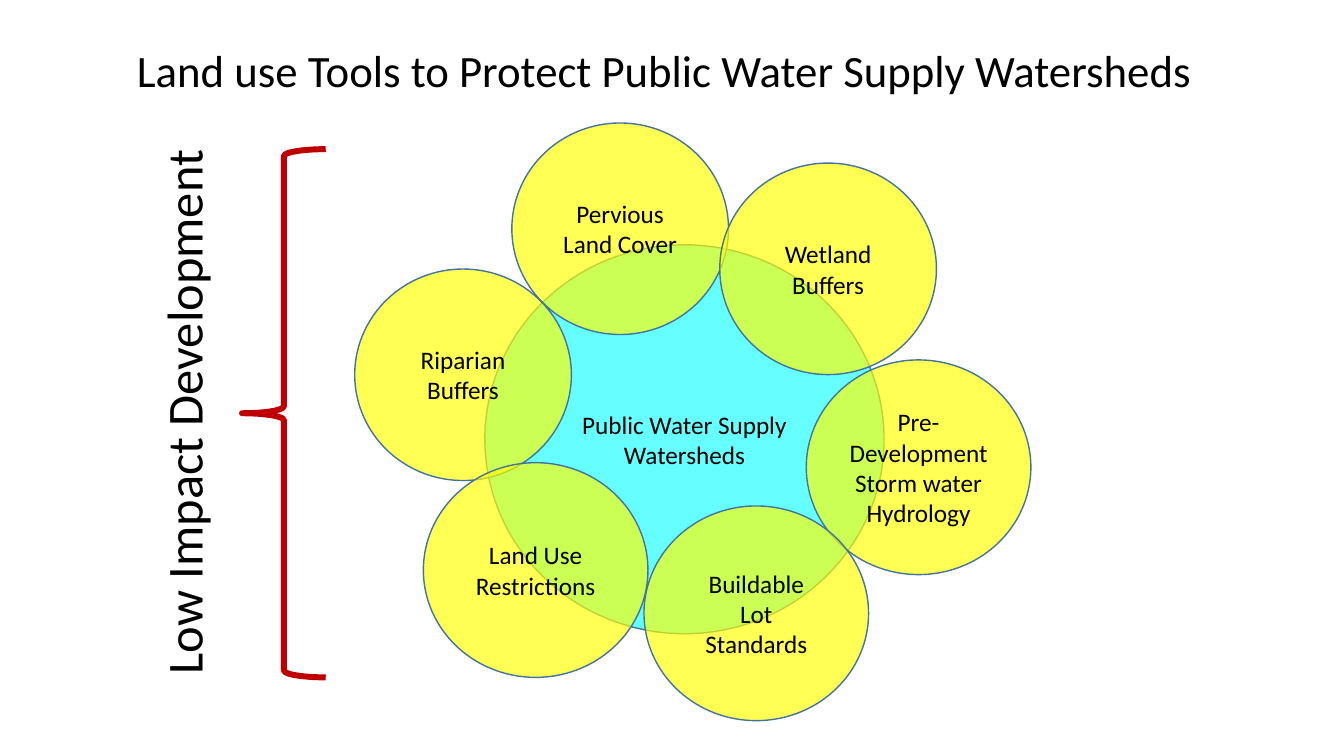
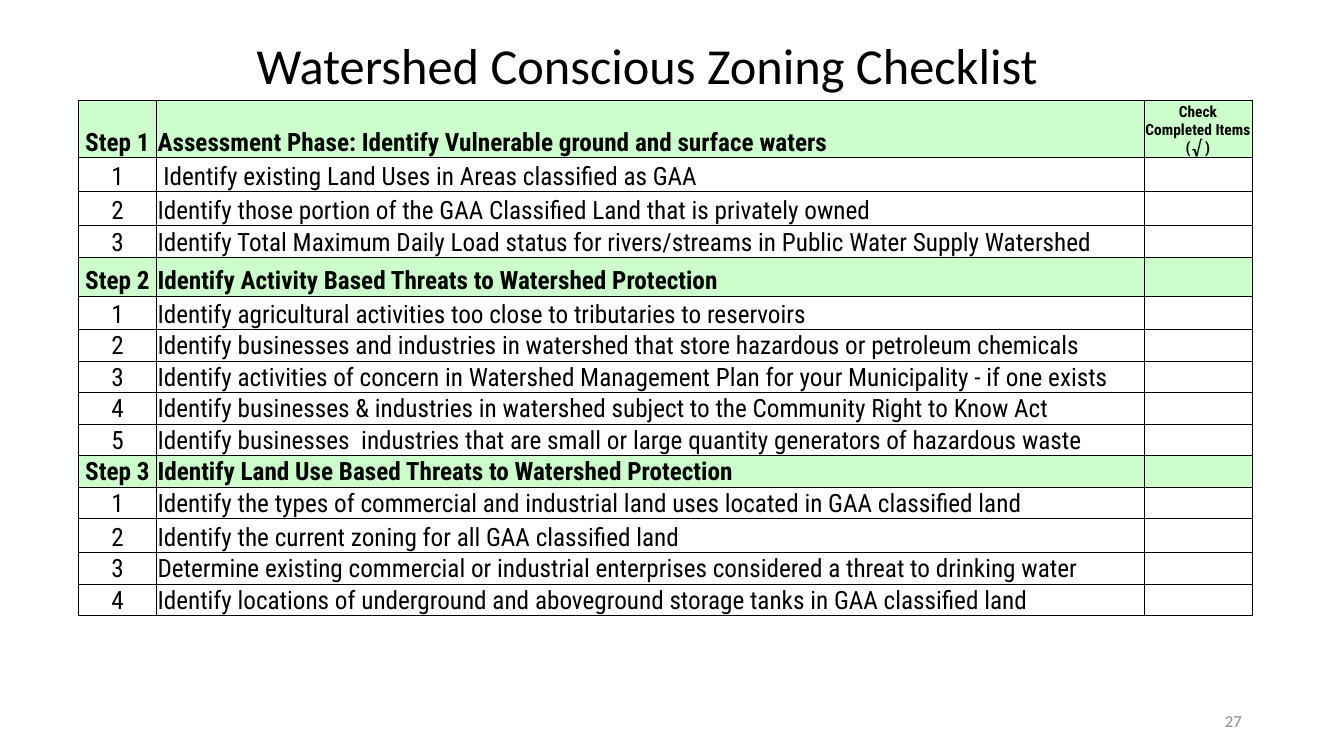
from dataclasses import dataclass

from lxml.etree import SubElement
from pptx import Presentation
from pptx.dml.color import RGBColor as Rgb
from pptx.enum.shapes import MSO_SHAPE as Shape
from pptx.enum.text import MSO_ANCHOR as Anchor, MSO_AUTO_SIZE as AutoSize, PP_ALIGN as Align
from pptx.oxml.ns import qn
from pptx.util import Cm, Pt


@dataclass(frozen=True)
class Theme:
    body_font: str = "Calibri"
    table_font: str = "Roboto Condensed"
    symbol_font: str = "TeX Gyre Pagella"
    ink: str = "000000"
    muted: str = "8C8C8C"
    water: str = "66FFFF"
    tool: str = "FFFF00"
    outline: str = "43739E"
    brace: str = "C00000"
    step: str = "CCFFCC"
    tool_opacity: int = 67
    heading: int = 36
    long_heading: int = 32
    body: int = 18
    note: int = 12
    column_note: int = 11


THEME = Theme()

SMALL, LARGE = (5.46, 5.33), (5.66, 5.41)
TOOLS = [  # text, left and top in cm, size
    ("Riparian Buffers", (8.94, 6.78), SMALL),
    ("Pre-Development Storm water Hydrology", (20.32, 9.07), LARGE),
    ("Buildable\nLot Standards", (16.23, 12.75), LARGE),
    ("Pervious Land Cover", (12.9, 3.1), SMALL),
    ("Wetland\nBuffers", (18.14, 4.11), SMALL),
    ("Land Use\nRestrictions", (10.67, 11.66), LARGE),
]

COLUMN_WIDTHS = (1.96, 24.89, 2.72)
CHECK_HEADING = (
    ("Check Completed Items (", THEME.table_font),
    ("√", THEME.symbol_font),
    (" )", THEME.table_font),
)
STEPS = [  # heading and items, each with its row height in cm
    (("Assessment Phase: Identify Vulnerable ground and surface waters", 1.39), [
        (" Identify existing Land Uses in Areas classified as GAA", 0.86),
        ("Identify those portion of the GAA Classified Land that is privately owned", 0.86),
        ("Identify Total Maximum Daily Load status for rivers/streams in Public Water Supply Watershed", 0.76),
    ]),
    (("Identify Activity Based Threats to Watershed Protection", 0.98), [
        ("Identify agricultural activities too close to tributaries to reservoirs", 0.84),
        ("Identify businesses and industries in watershed that store hazardous or petroleum chemicals", 0.76),
        ("Identify activities of concern in Watershed Management Plan for your Municipality - if one exists", 0.76),
        ("Identify businesses & industries in watershed subject to the Community Right to Know Act", 0.76),
        ("Identify businesses  industries that are small or large quantity generators of hazardous waste", 0.76),
    ]),
    (("Identify Land Use Based Threats to Watershed Protection", 0.76), [
        ("Identify the types of commercial and industrial land uses located in GAA classified land", 0.76),
        ("Identify the current zoning for all GAA classified land", 0.86),
        ("Determine existing commercial or industrial enterprises considered a threat to drinking water", 0.76),
        ("Identify locations of underground and aboveground storage tanks in GAA classified land", 0.76),
    ]),
]


def style_run(run, size, font=THEME.body_font, color=THEME.ink, bold=False):
    run.font.name = font
    run.font.size = Pt(size)
    run.font.bold = bold
    run.font.color.rgb = Rgb.from_string(color)


def write(frame, text, size, align=Align.LEFT, **style):
    frame.text = text
    for paragraph in frame.paragraphs:
        paragraph.alignment = align
        for run in paragraph.runs:
            style_run(run, size, **style)


def add_heading(slide, text, box, size=THEME.heading, rotation=0):
    heading = slide.shapes.add_textbox(*map(Cm, box))
    heading.rotation = rotation
    frame = heading.text_frame
    frame.word_wrap = False
    frame.auto_size = AutoSize.SHAPE_TO_FIT_TEXT
    write(frame, text, size)


def add_page_number(slide, number):
    frame = slide.shapes.add_textbox(Cm(23.93), Cm(17.65), Cm(7.62), Cm(1.02)).text_frame
    frame.word_wrap = True
    frame.vertical_anchor = Anchor.MIDDLE
    write(frame, str(number), THEME.note, Align.RIGHT, color=THEME.muted)


def add_circle(slide, text, position, size, fill, opacity=100):
    circle = slide.shapes.add_shape(Shape.OVAL, *map(Cm, position + size))
    circle.shadow.inherit = False
    circle.fill.solid()
    circle.fill.fore_color.rgb = Rgb.from_string(fill)
    if opacity < 100:
        color = circle._element.spPr.find(qn("a:solidFill"))[0]
        SubElement(color, qn("a:alpha"), val=str(opacity * 1000))
    circle.line.color.rgb = Rgb.from_string(THEME.outline)
    circle.line.width = Pt(1)
    circle.text_frame.word_wrap = True
    circle.text_frame.vertical_anchor = Anchor.MIDDLE
    write(circle.text_frame, text, THEME.body, Align.CENTER)


def add_brace(slide, box):
    brace = slide.shapes.add_shape(Shape.LEFT_BRACE, *map(Cm, box))
    brace.shadow.inherit = False
    brace.fill.background()
    brace.line.color.rgb = Rgb.from_string(THEME.brace)
    brace.line.width = Pt(4.25)


def format_cell(cell, fill):
    """Set insets, thin borders and the fill; borders precede the fill in the XML."""
    cell.margin_left = cell.margin_right = cell.margin_top = Cm(0.03)
    cell.margin_bottom = 0
    cell.vertical_anchor = Anchor.BOTTOM
    properties = cell._tc.get_or_add_tcPr()
    for side in ("lnL", "lnR", "lnT", "lnB"):
        border = SubElement(properties, qn(f"a:{side}"), w=str(Pt(0.5)))
        solid = SubElement(border, qn("a:solidFill"))
        SubElement(solid, qn("a:srgbClr"), val=THEME.ink)
    if fill:
        cell.fill.solid()
        cell.fill.fore_color.rgb = Rgb.from_string(fill)
    else:
        cell.fill.background()


def write_check_heading(cell):
    paragraph = cell.text_frame.paragraphs[0]
    paragraph.alignment = Align.CENTER
    for text, font in CHECK_HEADING:
        run = paragraph.add_run()
        run.text = text
        style_run(run, THEME.column_note, font, bold=True)


def checklist_rows():
    """Yield label, text, height and whether the row is a step heading."""
    for step, (heading, items) in enumerate(STEPS, 1):
        yield f"Step {step}", *heading, True
        for number, item in enumerate(items, 1):
            yield str(number), *item, False


def add_checklist(slide, left, top):
    rows = list(checklist_rows())
    height = sum(row[2] for row in rows)
    table = slide.shapes.add_table(
        len(rows), len(COLUMN_WIDTHS), Cm(left), Cm(top), Cm(sum(COLUMN_WIDTHS)), Cm(height)
    ).table
    table.first_row = table.horz_banding = False
    for column, width in zip(table.columns, COLUMN_WIDTHS):
        column.width = Cm(width)
    for row, (label, text, row_height, is_step) in zip(table.rows, rows):
        row.height = Cm(row_height)
        for cell in row.cells:
            format_cell(cell, THEME.step if is_step else None)
        label_cell, text_cell, _ = row.cells
        style = dict(font=THEME.table_font, bold=is_step)
        write(label_cell.text_frame, label, THEME.body, Align.CENTER, **style)
        write(text_cell.text_frame, text, THEME.body, **style)
    write_check_heading(table.cell(0, 2))


def build_tools_slide(slide):
    add_circle(slide, "Public Water Supply\nWatersheds", (12.22, 6.17), (10.06, 9.8), THEME.water)
    for text, position, size in TOOLS:
        add_circle(slide, text, position, size, THEME.tool, THEME.tool_opacity)
    add_heading(slide, "Land use Tools to Protect Public Water Supply Watersheds",
                (3.2, 0.94, 27.36, 1.63), THEME.long_heading)
    add_heading(slide, "Low Impact Development", (-2.31, 9.42, 13.84, 1.8), rotation=270)
    add_brace(slide, (6.1, 3.76, 2.11, 13.31))


def build_checklist_slide(slide):
    add_page_number(slide, 27)
    add_checklist(slide, 1.98, 2.54)
    add_heading(slide, "Watershed Conscious Zoning Checklist", (6.22, 0.74, 21.08, 1.8))


def main():
    deck = Presentation()
    deck.slide_width, deck.slide_height = Cm(33.87), Cm(19.05)
    blank = deck.slide_layouts[6]
    for build in (build_tools_slide, build_checklist_slide):
        build(deck.slides.add_slide(blank))
    deck.save("out.pptx")


if __name__ == "__main__":
    main()
